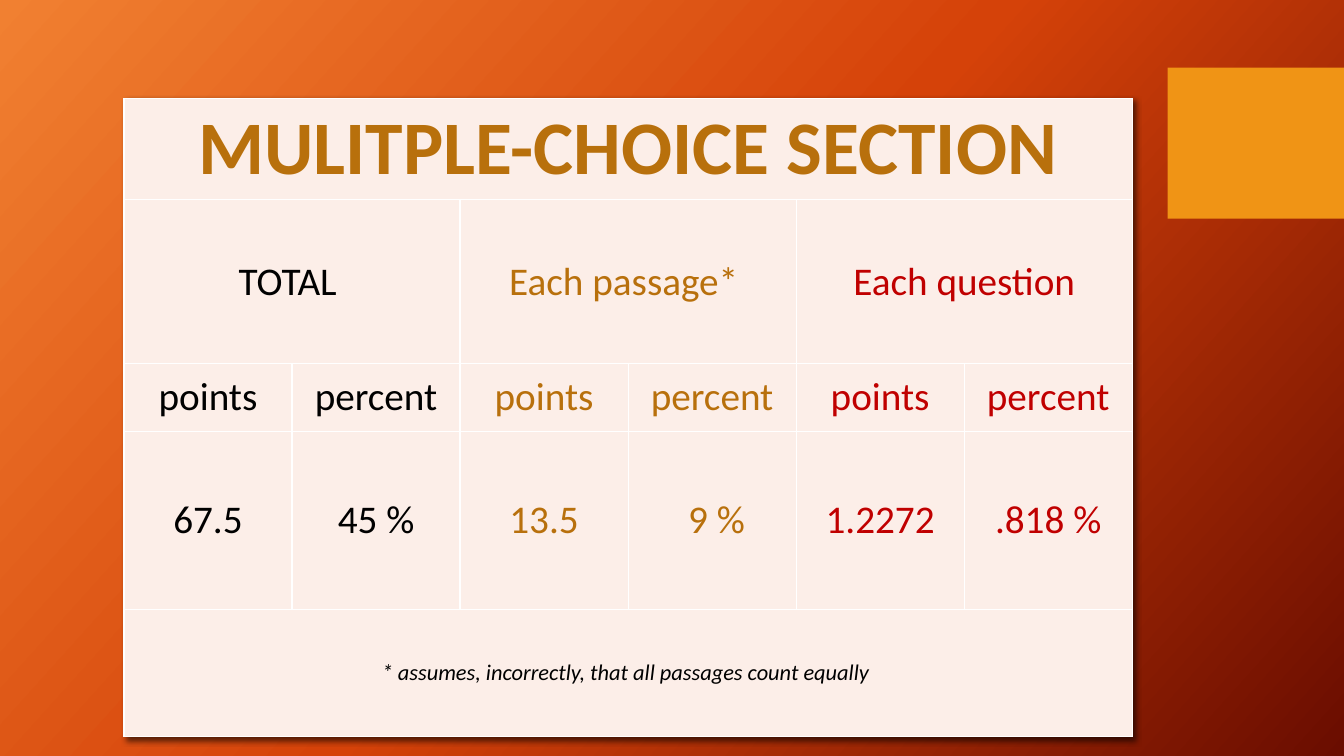
from copy import deepcopy

from lxml.etree import SubElement
from pptx import Presentation
from pptx.dml.color import RGBColor
from pptx.enum.shapes import MSO_SHAPE
from pptx.enum.text import MSO_ANCHOR, PP_ALIGN
from pptx.oxml.ns import qn
from pptx.util import Inches, Pt

BLACK, GOLD, RED = "000000", "B8700C", "C00000"


def rgb(value):
    return RGBColor.from_string(value)


def write(tf, text, size=28, color=BLACK, bold=False, italic=False, font="Calibri"):
    p = tf.paragraphs[0]
    p.alignment = PP_ALIGN.CENTER
    r = p.add_run()
    r.text = text
    r.font.name = font
    r.font.size = Pt(size)
    r.font.bold = bold
    r.font.italic = italic
    r.font.color.rgb = rgb(color)


class SlideBuilder:
    cell_fill = "FCEEE8"
    border = "FFFFFF"
    margin = 0.04

    def __init__(self, prs):
        self.s = prs.slides.add_slide(prs.slide_layouts[6])

    def background(self, colors, angle):
        fill = self.s.background.fill
        fill.gradient()
        fill.gradient_angle = 360 - angle
        stops = self.s._element.find(".//" + qn("a:gsLst"))
        stops.insert(1, deepcopy(stops[0]))
        for i, (stop, color) in enumerate(zip(fill.gradient_stops, colors)):
            stop.position = i / (len(colors) - 1)
            stop.color.rgb = rgb(color)

    def rectangle(self, left, top, width, height, color):
        sp = self.s.shapes.add_shape(
            MSO_SHAPE.RECTANGLE, Inches(left), Inches(top), Inches(width), Inches(height))
        sp.shadow.inherit = False
        sp.fill.solid()
        sp.fill.fore_color.rgb = rgb(color)
        sp.line.fill.background()

    def table(self, left, top, width, heights, columns):
        frame = self.s.shapes.add_table(
            len(heights), columns, Inches(left), Inches(top),
            Inches(width), Inches(sum(heights)))
        table = frame.table
        table.first_row = table.horz_banding = False
        for row, height in zip(table.rows, heights):
            row.height = Inches(height)
        for cell in table.iter_cells():
            self.style_cell(cell)
        self.table_shadow(table)
        return table

    def style_cell(self, cell):
        cell.fill.solid()
        cell.fill.fore_color.rgb = rgb(self.cell_fill)
        cell.vertical_anchor = MSO_ANCHOR.MIDDLE
        cell.margin_left = cell.margin_right = Inches(self.margin)
        cell.margin_top = cell.margin_bottom = Inches(self.margin)
        tcPr = cell._tc.get_or_add_tcPr()
        for i, side in enumerate(("lnL", "lnR", "lnT", "lnB")):
            ln = SubElement(tcPr, qn("a:" + side), w=str(Pt(1)))
            fill = SubElement(ln, qn("a:solidFill"))
            SubElement(fill, qn("a:srgbClr"), val=self.border)
            tcPr.insert(i, ln)

    def table_shadow(self, table):
        tblPr = table._tbl.tblPr
        effects = SubElement(tblPr, qn("a:effectLst"))
        tblPr.insert(0, effects)
        shadow = SubElement(effects, qn("a:outerShdw"), blurRad=str(Pt(4)),
                            dist=str(Pt(3)), dir="2700000", rotWithShape="0")
        color = SubElement(shadow, qn("a:srgbClr"), val=BLACK)
        SubElement(color, qn("a:alpha"), val="60000")

    def cell_text(self, table, row, column, text, span=1, **style):
        cell = table.cell(row, column)
        if span > 1:
            cell.merge(table.cell(row, column + span - 1))
        write(cell.text_frame, text, **style)


def main():
    prs = Presentation()
    prs.slide_width, prs.slide_height = Inches(13.33), Inches(7.5)
    b = SlideBuilder(prs)
    b.background(("F18031", "D54209", "6A0D00"), 42)
    b.rectangle(11.58, 0.67, 1.75, 1.5, "F09415")

    table = b.table(1.23, 0.98, 10, (1, 1.63, 0.67, 1.77, 1.26), 6)
    b.cell_text(table, 0, 0, "MULITPLE-CHOICE SECTION", 6, size=54, color=GOLD, bold=True)
    groups = (
        ("TOTAL ", BLACK, "67.5", "45 %"),
        ("Each passage* ", GOLD, "13.5", " 9 %"),
        ("Each question", RED, "1.2272", ".818 %"),
    )
    for i, (heading, color, points, percent) in enumerate(groups):
        b.cell_text(table, 1, 2 * i, heading, 2, color=color)
        for j, (unit, value) in enumerate((("points", points), ("percent", percent))):
            b.cell_text(table, 2, 2 * i + j, unit, color=color)
            b.cell_text(table, 3, 2 * i + j, value, color=color)
    b.cell_text(table, 4, 0, "* assumes, incorrectly, that all passages count equally ", 6,
                size=16, italic=True)
    prs.save("out.pptx")


if __name__ == "__main__":
    main()
